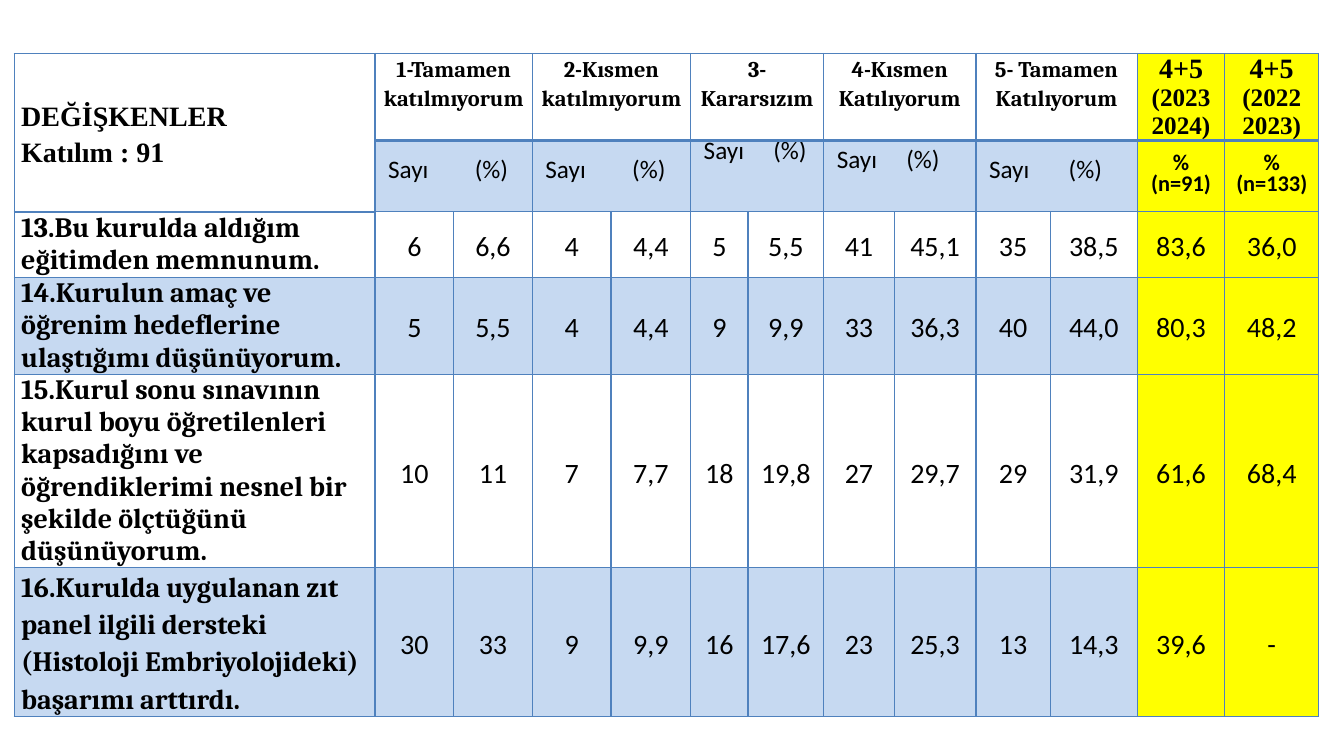
"""Build a slide with a survey table of counts and percentages."""
import lxml.etree
import pptx
import pptx.dml.color
import pptx.enum.text
import pptx.oxml.ns
import pptx.util

Inches = pptx.util.Inches
Pt = pptx.util.Pt
RGBColor = pptx.dml.color.RGBColor
ALIGN = pptx.enum.text.PP_ALIGN
ANCHOR = pptx.enum.text.MSO_ANCHOR

BLACK = RGBColor(0x00, 0x00, 0x00)
BLUE = RGBColor(0xC6, 0xD9, 0xF1)
YELLOW = RGBColor(0xFF, 0xFF, 0x00)
BORDER = RGBColor(0x4F, 0x81, 0xBD)

WIDTHS = [3.58, 0.78, 0.78, 0.78, 0.79, 0.57, 0.75, 0.7, 0.81, 0.74, 0.86, 0.87, 0.93]
HEIGHTS = [0.86, 0.71, 0.65, 0.96, 1.91, 1.46]
FIRST_SUM = 11

# fmt: off
GROUPS = [
    ("1-Tamamen katılmıyorum", 0.86, 0),
    ("2-Kısmen katılmıyorum", 0.86, 0),
    ("3-Kararsızım", 0.69, 0.38),
    ("4-Kısmen Katılıyorum", 0.69, 0.2),
    ("5- Tamamen Katılıyorum", 0.79, 0),
]
# fmt: on
SUMS = [("(2023 2024)", "(n=91)"), ("(2022 2023)", "(n=133)")]
ITEMS = [
    ("13.Bu kurulda aldığım eğitimden memnunum.", 1.0,
     "6 6,6 4 4,4 5 5,5 41 45,1 35 38,5 83,6 36,0"),
    ("14.Kurulun amaç ve öğrenim hedeflerine ulaştığımı düşünüyorum.", 1.0,
     "5 5,5 4 4,4 9 9,9 33 36,3 40 44,0 80,3 48,2"),
    ("15.Kurul sonu sınavının kurul boyu öğretilenleri kapsadığını ve "
     "öğrendiklerimi nesnel bir şekilde ölçtüğünü düşünüyorum.", 1.0,
     "10 11 7 7,7 18 19,8 27 29,7 29 31,9 61,6 68,4"),
    ("16.Kurulda uygulanan zıt panel ilgili dersteki "
     "(Histoloji Embriyolojideki) başarımı arttırdı.", 1.15,
     "30 33 9 9,9 16 17,6 23 25,3 13 14,3 39,6 -"),
]


def add_tag(parent, name, **attrs):
    """Append a drawing element to its parent."""
    tag = lxml.etree.SubElement(parent, pptx.oxml.ns.qn(name))
    for key, value in attrs.items():
        tag.set(key, str(value))
    return tag


def draw_edges(cell, row):
    """Draw the four borders, thicker between the two heading rows."""
    props = cell._tc.get_or_add_tcPr()
    thick = {0: "B", 1: "T"}.get(row)
    for side in "LRTB":
        width = Pt(2.25 if side == thick else 1)
        edge = add_tag(props, "a:ln" + side, w=int(width))
        add_tag(add_tag(edge, "a:solidFill"), "a:srgbClr", val=BORDER)


def style_cell(cell, row, col):
    """Set the margins, borders and fill that follow from the position."""
    cell.margin_left = cell.margin_right = Inches(0.07)
    cell.margin_top = cell.margin_bottom = 0
    draw_edges(cell, row)
    if col >= FIRST_SUM:
        cell.fill.solid()
        cell.fill.fore_color.rgb = YELLOW
    elif row % 2 and col:
        cell.fill.solid()
        cell.fill.fore_color.rgb = BLUE
    elif row in (3, 5):
        cell.fill.solid()
        cell.fill.fore_color.rgb = BLUE
    else:
        cell.fill.background()


def write(cell, lines, font, bold=True, space=1.0, align=ALIGN.CENTER, anchor=ANCHOR.MIDDLE):
    """Write lines of (text, size) into a cell."""
    cell.vertical_anchor = anchor
    frame = cell.text_frame
    for index, (text, size) in enumerate(lines):
        para = frame.add_paragraph() if index else frame.paragraphs[0]
        para.alignment = align
        para.line_spacing = space
        run = para.add_run()
        run.text = text
        run.font.name = font
        run.font.size = Pt(size)
        run.font.bold = bold
        run.font.color.rgb = BLACK


def fill_group(table, col, name, stop, lift):
    """Write an answer heading and its count and percent labels."""
    for row in (0, 1):
        table.cell(row, col).merge(table.cell(row, col + 1))
    write(table.cell(0, col), [(name, 16)], "Cambria", space=1.15, anchor=ANCHOR.TOP)
    label = table.cell(1, col)
    write(label, [("Sayı\t(%)", 18)], "Calibri", False, Pt(13), ALIGN.LEFT)
    label.margin_left = Inches(0.13)
    label.margin_bottom = Inches(lift)
    props = label.text_frame.paragraphs[0]._p.get_or_add_pPr()
    add_tag(add_tag(props, "a:tabLst"), "a:tab", pos=int(Inches(stop)), algn="l")


def fill_head(table):
    """Fill the two heading rows."""
    table.cell(0, 0).merge(table.cell(1, 0))
    write(table.cell(0, 0), [("DEĞİŞKENLER", 20), ("Katılım : 91", 20)],
          "Times New Roman", space=1.15, align=ALIGN.LEFT)
    for index, group in enumerate(GROUPS):
        fill_group(table, 1 + 2 * index, *group)
    for col, (years, count) in enumerate(SUMS, FIRST_SUM):
        write(table.cell(0, col), [("4+5", 20), (years, 18)],
              "Times New Roman", anchor=ANCHOR.TOP)
        write(table.cell(1, col), [("%", 16), (count, 16)], "Calibri", space=Pt(15))


def fill_items(table):
    """Fill one row for each survey item."""
    for row, (text, space, values) in enumerate(ITEMS, 2):
        write(table.cell(row, 0), [(text, 20)], "Cambria", space=space,
              align=ALIGN.LEFT, anchor=ANCHOR.TOP)
        for col, value in enumerate(values.split(), 1):
            write(table.cell(row, col), [(value, 20)], "Calibri", False, 1.15)


def add_grid(slide):
    """Add the styled empty table and return it."""
    frame = slide.shapes.add_table(
        len(HEIGHTS), len(WIDTHS), Inches(0.14), Inches(0.53),
        Inches(sum(WIDTHS)), Inches(sum(HEIGHTS)))
    table = frame.table
    table.first_row = table.horz_banding = False
    for column, width in zip(table.columns, WIDTHS):
        column.width = Inches(width)
    for row, height in enumerate(HEIGHTS):
        table.rows[row].height = Inches(height)
        for col in range(len(WIDTHS)):
            style_cell(table.cell(row, col), row, col)
    return table


def main():
    """Build and save the slide."""
    deck = pptx.Presentation()
    deck.slide_width = Inches(13.33)
    deck.slide_height = Inches(7.5)
    slide = deck.slides.add_slide(deck.slide_layouts[6])
    table = add_grid(slide)
    fill_head(table)
    fill_items(table)
    deck.save("out.pptx")


if __name__ == "__main__":
    main()
